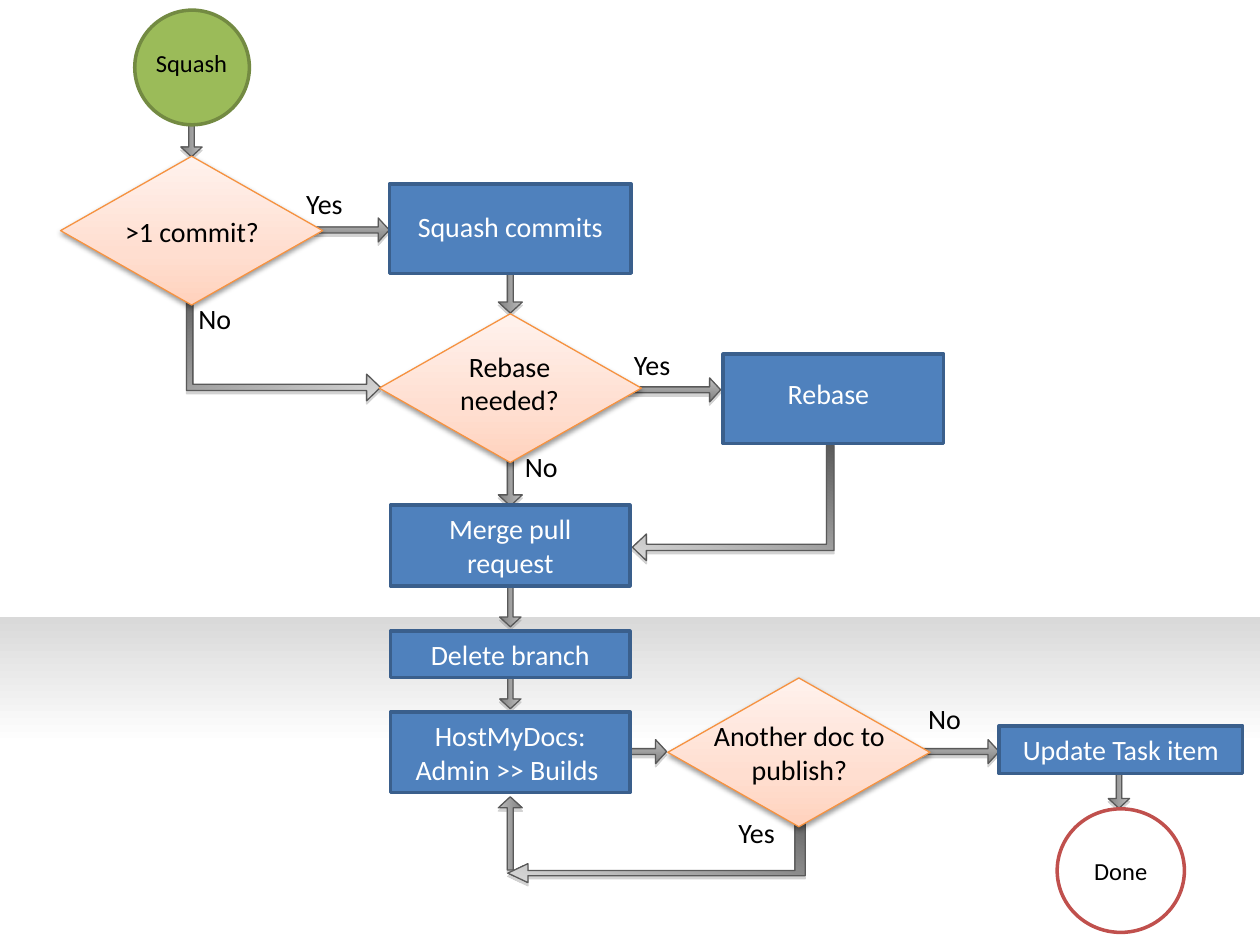
from lxml import etree
from pptx import Presentation
from pptx.dml.color import RGBColor
from pptx.enum.shapes import MSO_SHAPE
from pptx.enum.text import MSO_ANCHOR, PP_ALIGN
from pptx.oxml.ns import qn
from pptx.util import Pt

RECT = MSO_SHAPE.RECTANGLE
OVAL = MSO_SHAPE.OVAL
DIAMOND = MSO_SHAPE.DIAMOND
ARROW = MSO_SHAPE.RIGHT_ARROW
CENTER = PP_ALIGN.CENTER
MIDDLE = MSO_ANCHOR.MIDDLE

WHITE = RGBColor(0xFF, 0xFF, 0xFF)
BLACK = RGBColor(0, 0, 0)
BLUE = RGBColor(0x4F, 0x81, 0xBD)
NAVY = RGBColor(0x3A, 0x5F, 0x8C)
GREEN = RGBColor(0x9B, 0xBB, 0x59)
MOSS = RGBColor(0x73, 0x8A, 0x42)
RED = RGBColor(0xC0, 0x50, 0x4D)
ORANGE = RGBColor(0xF6, 0x92, 0x40)
PEACH = RGBColor(0xFF, 0xD2, 0xBD)
BLUSH = RGBColor(0xFF, 0xDE, 0xD0)
CREAM = RGBColor(0xFF, 0xF2, 0xED)
PALE = RGBColor(0xD9, 0xD9, 0xD9)
SILVER = RGBColor(0xBF, 0xBF, 0xBF)
GREY = RGBColor(0x7F, 0x7F, 0x7F)
DARK = RGBColor(0x59, 0x59, 0x59)
MID = RGBColor(0x80, 0x80, 0x80)

# stops: (percent, colour); angle: clockwise degrees
# shadow: colour, opacity in percent, blur, distance
SOFT = (MID, 35, 0, 1.8)
BAND = {"stops": [(0, PALE), (39, WHITE)], "angle": 90}
FLOW = {"stops": [(0, SILVER), (100, GREY)], "angle": 90,
        "line": DARK, "width": 0.75, "shadow": SOFT}
BEND = {**FLOW, "stops": [(0, DARK), (100, PALE)]}
CHOICE = {"stops": [(0, PEACH), (35, BLUSH), (100, CREAM)], "angle": 270,
          "line": ORANGE, "width": 0.75, "shadow": (BLACK, 38, 3.1, 1.6)}
STEP = {"fill": BLUE, "line": NAVY, "width": 2}
START = {"fill": GREEN, "line": MOSS, "width": 2}
FINISH = {"fill": WHITE, "line": RED, "width": 2}


def paint(shape, look):
    """Give a shape its fill, outline and shadow from a look."""
    props = shape._element.spPr
    shape.shadow.inherit = False
    if "stops" in look:
        shape.fill.gradient()
        shape.fill.gradient_angle = (360 - look["angle"]) % 360
        stops = props.find(".//" + qn("a:gsLst"))
        for old in list(stops):
            stops.remove(old)
        for place, color in look["stops"]:
            stop = etree.SubElement(stops, qn("a:gs"), pos=str(place * 1000))
            etree.SubElement(stop, qn("a:srgbClr"), val=str(color))
    else:
        shape.fill.solid()
        shape.fill.fore_color.rgb = look["fill"]
    if "line" in look:
        shape.line.color.rgb = look["line"]
        shape.line.width = Pt(look["width"])
    else:
        shape.line.fill.background()
    if "shadow" in look:
        color, alpha, blur, dist = look["shadow"]
        shade = etree.SubElement(
            props.find(qn("a:effectLst")), qn("a:outerShdw"),
            blurRad=str(Pt(blur)), dist=str(Pt(dist)),
            dir="5400000", rotWithShape="0")
        tint = etree.SubElement(shade, qn("a:srgbClr"), val=str(color))
        etree.SubElement(tint, qn("a:alpha"), val=str(alpha * 1000))


def write(shape, text, color, size):
    frame = shape.text_frame
    frame.word_wrap = True
    frame.vertical_anchor = MIDDLE
    para = frame.paragraphs[0]
    para.alignment = CENTER
    run = para.add_run()
    run.text = text
    form = {"name": "Calibri", "size": Pt(size)}
    for key, value in form.items():
        setattr(run.font, key, value)
    run.font.color.rgb = color


deck = Presentation()
deck.slide_width, deck.slide_height = Pt(720), Pt(540)
slide = deck.slides.add_slide(deck.slide_layouts[6])
shapes = slide.shapes

band = shapes.add_shape(RECT, Pt(0), Pt(352.8), Pt(720), Pt(187.2))
paint(band, BAND)

# Straight arrows: centre, length, thickness, turn
MAIN = 291.6
arrows = [
    (109.4, 74.5, 30.2, 12.2, 90),
    (191.5, 131.4, 61.9, 13.7, 0),
    (MAIN, 154.4, 49, 13.7, 90),
    (380.9, 222.8, 61.9, 13.7, 0),
    (MAIN, 264.6, 49, 13.7, 90),
    (MAIN, 343.1, 30.2, 12.2, 90),
    (MAIN, 389.9, 30.2, 12.2, 90),
    (350, 429.5, 61.9, 13.7, 0),
    (540, 429.5, 61.9, 13.7, 0),
    (MAIN, 476.2, 41.8, 13.7, 270),
    (639.4, 446.8, 30.2, 12.2, 90),
]
for x, y, long, thick, turn in arrows:
    arrow = shapes.add_shape(ARROW, Pt(x - long / 2), Pt(y - thick / 2),
                             Pt(long), Pt(thick))
    arrow.adjustments[0] = 0.25
    arrow.adjustments[1] = 0.46
    arrow.rotation = turn
    paint(arrow, FLOW)

# Bent arrows: outer and inner x, top, upper and lower y, neck, tip, half head
bends = [
    (106.6, 110.2, 160.6, 219.6, 223.2, 209.5, 217.4, 7.6),
    (476.6, 472.3, 253.4, 311, 314.6, 369.4, 361.4, 7.6),
    (460.1, 454.3, 455, 497.5, 500.4, 301.7, 290.2, 5.4),
]
for outer, inner, top, high, low, neck, tip, half in bends:
    mid = (high + low) / 2
    dots = [(inner, high), (neck, high), (neck, mid - half), (tip, mid),
            (neck, mid + half), (neck, low), (outer, low), (outer, top)]
    pen = shapes.build_freeform(Pt(inner), Pt(top))
    pen.add_line_segments([(Pt(x), Pt(y)) for x, y in dots], close=True)
    paint(pen.convert_to_shape(), {**BEND, "angle": 69 if tip > outer else 111})

# Nodes: kind, look, left, top, width, height, text
nodes = [
    (OVAL, START, 77, 5.8, 65.5, 65.5, ""),
    (RECT, STEP, 222.5, 105.1, 138.2, 51.1, ""),
    (RECT, STEP, 413.3, 202.3, 126, 51.1, ""),
    (RECT, STEP, 223.2, 288.7, 136.8, 46.1, "Merge pull request"),
    (RECT, STEP, 223.2, 360.7, 136.8, 26.6, "Delete branch"),
    (RECT, STEP, 223.2, 406.8, 136.8, 46.1, "HostMyDocs: Admin >> Builds "),
    (RECT, STEP, 571, 414.7, 139, 27.4, "Update Task item"),
    (DIAMOND, CHOICE, 34.6, 89.3, 149.8, 85, ""),
    (DIAMOND, CHOICE, 216.7, 179.3, 149.8, 85, ""),
    (DIAMOND, CHOICE, 381.6, 387.4, 149.8, 85, ""),
    (OVAL, FINISH, 604.1, 462.2, 72.7, 70.6, "Done"),
]
for kind, look, x, y, wide, high, text in nodes:
    node = shapes.add_shape(kind, Pt(x), Pt(y), Pt(wide), Pt(high))
    paint(node, look)
    if text and kind == RECT:
        write(node, text, WHITE, 16)
    elif text:
        write(node, text, BLACK, 14)

# Labels: left, top, width, height, text, colour, size
labels = [
    (72.7, 23.8, 73.4, 24.5, "Squash", BLACK, 14),
    (216.7, 115.9, 149.8, 26.6, "Squash commits", WHITE, 16),
    (421.2, 211.7, 104.4, 26.6, "Rebase", WHITE, 16),
    (53.3, 118.8, 113, 26.6, ">1 commit?", BLACK, 16),
    (234.7, 195.8, 113, 46.1, "Rebase needed?", BLACK, 16),
    (400.3, 406.8, 113, 46.1, "Another doc to publish?", BLACK, 16),
]
answers = [
    (166.3, 103, "Yes"), (103.7, 168.5, "No"),
    (353.5, 195.1, "Yes"), (290.2, 253.4, "No"),
    (413.3, 462.2, "Yes"), (520.6, 397.4, "No"),
]
labels += [(x, y, 38.2, 26.6, text, BLACK, 16) for x, y, text in answers]
for x, y, wide, high, text, color, size in labels:
    label = shapes.add_textbox(Pt(x), Pt(y), Pt(wide), Pt(high))
    write(label, text, color, size)

deck.save("out.pptx")
